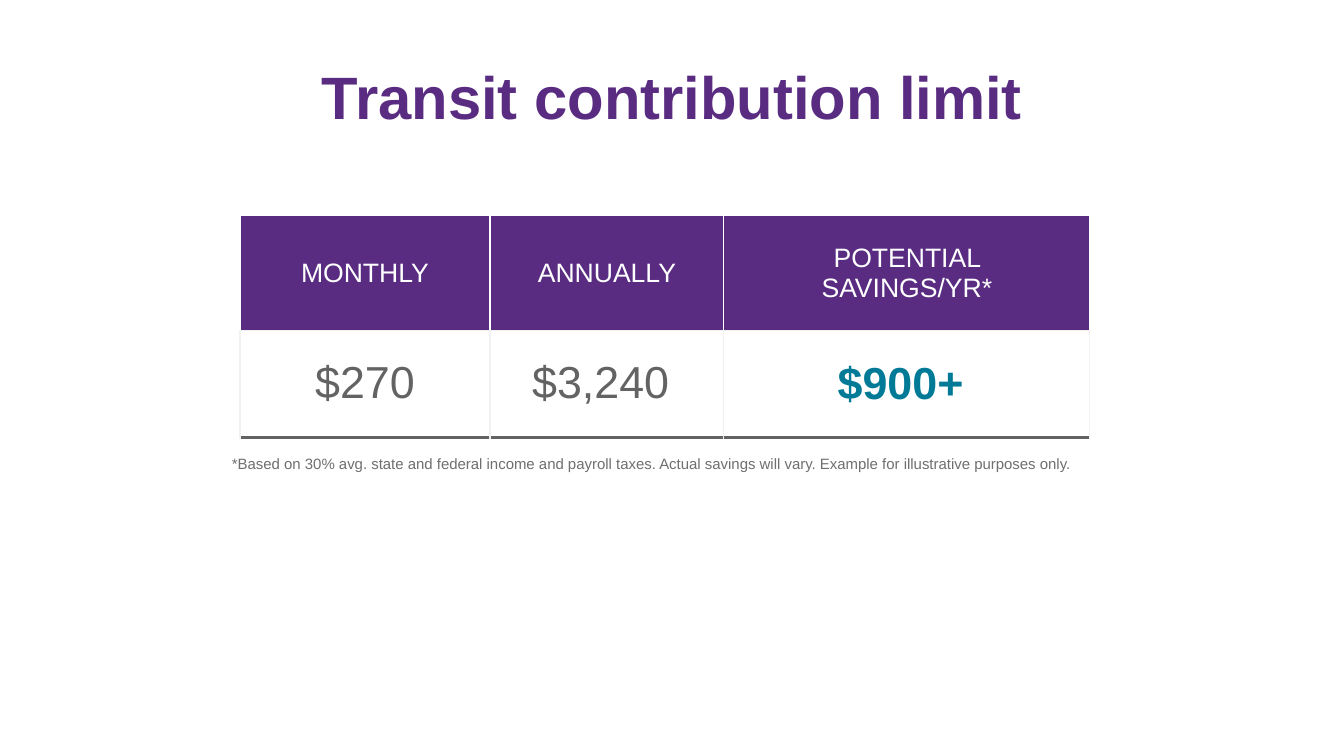
from dataclasses import dataclass

from lxml.etree import SubElement
from pptx import Presentation
from pptx.dml.color import RGBColor
from pptx.enum.text import MSO_ANCHOR, MSO_AUTO_SIZE, PP_ALIGN
from pptx.oxml import parse_xml
from pptx.oxml.ns import nsdecls, qn
from pptx.util import Inches, Pt

TITLE = "Transit contribution limit"
HEADINGS = ["MONTHLY", "ANNUALLY", "POTENTIAL SAVINGS/YR*"]
AMOUNTS = ["$270", "$3,240 ", "$900+ "]
FOOTNOTE = (
    "*Based on 30% avg. state and federal income and payroll taxes. "
    "Actual savings will vary. Example for illustrative purposes only."
)

SLIDE_SIZE = (13.33, 7.5)
TITLE_BOX = (0.67, 0.4, 12, 0.83)
TABLE_ORIGIN = (2.38, 2.14)
COLUMN_WIDTHS = [2.48, 2.32, 3.63]
ROW_HEIGHTS = [1.14, 1.06]
CELL_MARGIN = 0.27
FOOTNOTE_BOX = (2.2, 4.46, 8.56, 0.28)


@dataclass(frozen=True)
class Theme:
    font: str = "Arial"
    purple: str = "592C82"
    teal: str = "007A96"
    gray: str = "626362"
    note_gray: str = "6F6F6F"
    pale: str = "F1F1F2"
    white: str = "FFFFFF"
    title_size: float = 42.7
    heading_size: float = 19
    amount_size: float = 32
    note_size: float = 10.7


THEME = Theme()


def write(frame, text, size, color, bold=False, align=PP_ALIGN.CENTER):
    frame.text = text
    para = frame.paragraphs[0]
    para.alignment = align
    para.space_before = Pt(0)
    font = para.runs[0].font
    font.name, font.size, font.bold = THEME.font, Pt(size), bold
    font.color.rgb = RGBColor.from_string(color)
    return para


def place(shape, box):
    shape.left, shape.top, shape.width, shape.height = map(Inches, box)


def set_borders(cell, sides, bottom):
    """Draw the four cell edges; bottom is a (color, points) pair."""
    edges = [("lnL", sides, 1), ("lnR", sides, 1), ("lnT", sides, 1), ("lnB", *bottom)]
    properties = cell._tc.get_or_add_tcPr()
    for position, (tag, color, width) in enumerate(edges):
        line = parse_xml(f'<a:{tag} {nsdecls("a")} w="{Pt(width)}"/>')
        fill = SubElement(line, qn("a:solidFill"))
        SubElement(fill, qn("a:srgbClr"), val=color)
        properties.insert(position, line)


def add_title(page):
    title = page.shapes.title
    place(title, TITLE_BOX)
    frame = title.text_frame
    frame.auto_size = MSO_AUTO_SIZE.NONE
    frame.vertical_anchor = MSO_ANCHOR.TOP
    frame.margin_left = frame.margin_right = frame.margin_bottom = Inches(0.13)
    frame.margin_top = Inches(0.19)
    write(frame, TITLE, THEME.title_size, THEME.purple, bold=True)


def add_limits_table(page):
    size = (sum(COLUMN_WIDTHS), sum(ROW_HEIGHTS))
    frame = page.shapes.add_table(
        len(ROW_HEIGHTS), len(COLUMN_WIDTHS), *map(Inches, TABLE_ORIGIN + size)
    )
    table = frame.table
    table.first_row = table.horz_banding = False
    for row, height in zip(table.rows, ROW_HEIGHTS):
        row.height = Inches(height)
    for column, width in enumerate(COLUMN_WIDTHS):
        table.columns[column].width = Inches(width)

        heading = table.cell(0, column)
        write(heading.text_frame, HEADINGS[column], THEME.heading_size, THEME.white)
        heading.fill.solid()
        heading.fill.fore_color.rgb = RGBColor.from_string(THEME.purple)
        set_borders(heading, THEME.white, (THEME.pale, 1))

        amount = table.cell(1, column)
        is_savings = column == len(COLUMN_WIDTHS) - 1
        color = THEME.teal if is_savings else THEME.gray
        write(amount.text_frame, AMOUNTS[column], THEME.amount_size, color, is_savings)
        amount.fill.background()
        set_borders(amount, THEME.pale, (THEME.gray, 3))

        for cell in (heading, amount):
            cell.margin_left = cell.margin_right = Inches(CELL_MARGIN)
            cell.margin_top = cell.margin_bottom = Inches(CELL_MARGIN)
        heading.vertical_anchor = MSO_ANCHOR.MIDDLE
        amount.vertical_anchor = MSO_ANCHOR.MIDDLE if is_savings else MSO_ANCHOR.TOP


def add_footnote(page):
    note = page.placeholders[1]
    place(note, FOOTNOTE_BOX)
    note.text_frame.auto_size = MSO_AUTO_SIZE.NONE
    para = write(
        note.text_frame, FOOTNOTE, THEME.note_size, THEME.note_gray, align=PP_ALIGN.LEFT
    )
    properties = para._p.get_or_add_pPr()
    properties.set("marL", "0")
    properties.set("indent", "0")
    SubElement(properties, qn("a:buNone"))


def main():
    deck = Presentation()
    deck.slide_width, deck.slide_height = map(Inches, SLIDE_SIZE)
    page = deck.slides.add_slide(deck.slide_layouts[1])
    add_title(page)
    add_limits_table(page)
    add_footnote(page)
    deck.save("out.pptx")


if __name__ == "__main__":
    main()
